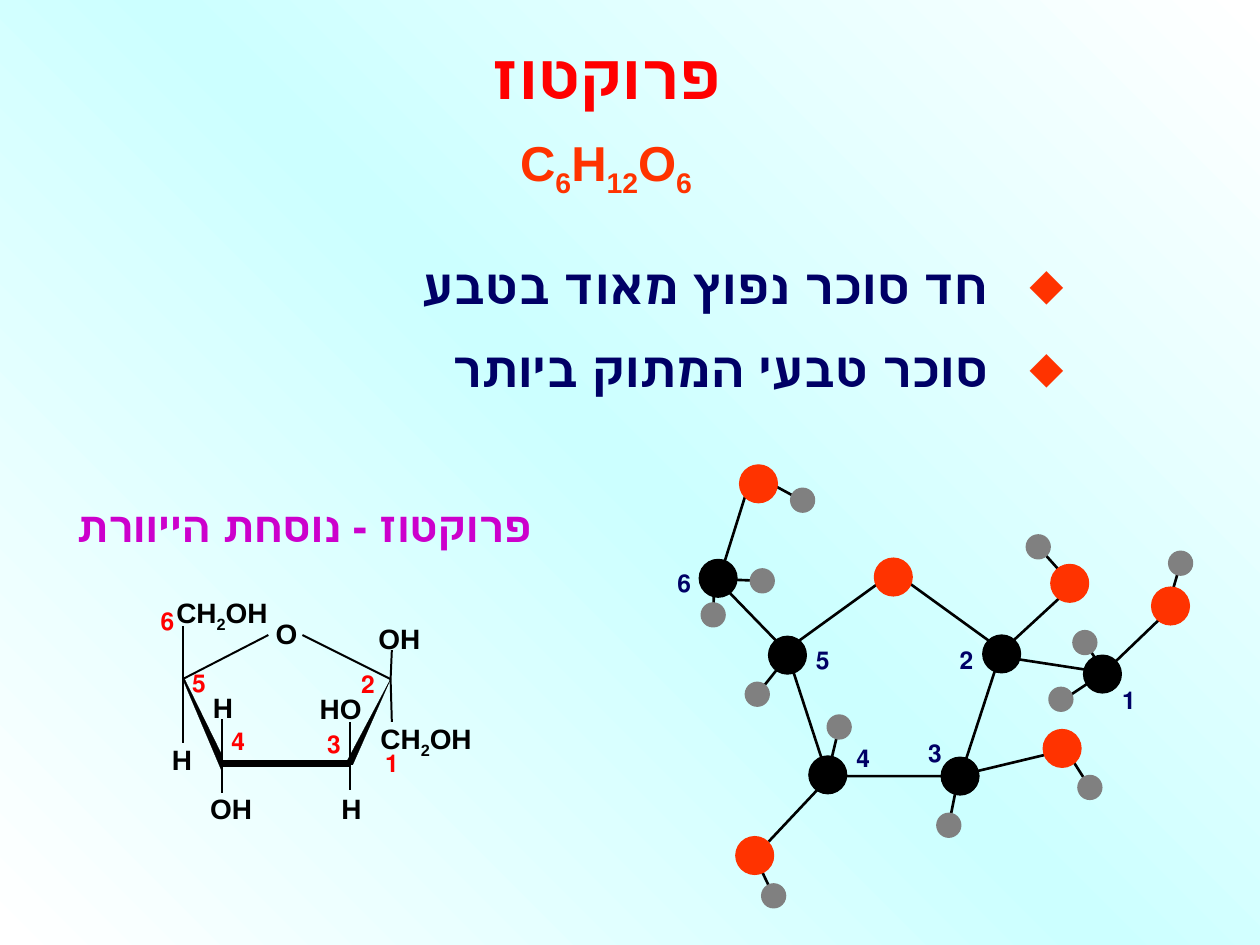
from copy import deepcopy
from itertools import groupby
from lxml import etree
from pptx import Presentation
from pptx import util as u
from pptx.dml.color import RGBColor as RGB
from pptx.enum import shapes, text
from pptx.oxml import ns

T = dict(
    font="Arial", red="FF0000", orange="FF3300", navy="000066", magenta="CC00CC",
    black="000000", grey="808080", white="FFFFFF", pale="CCFFFF",
    title=36, body=28, caption=24, atom=16, number=14,
)
LEFT, CENTER, RIGHT = text.PP_ALIGN.LEFT, text.PP_ALIGN.CENTER, text.PP_ALIGN.RIGHT

prs = Presentation()
prs.slide_width, prs.slide_height = u.Inches(10), u.Inches(7.5)
COL, ROW = prs.slide_width / 100, prs.slide_height / 75
s = prs.slides.add_slide(prs.slide_layouts[6])

fill = s.background.fill
fill.gradient()
fill.gradient_angle = 45
last = fill.gradient_stops[1]._gs
last.addprevious(deepcopy(last))
for stop, (position, color) in zip(
    fill.gradient_stops, [(0, T["white"]), (0.5, T["pale"]), (1, T["white"])]
):
    stop.position = position
    stop.color.rgb = RGB.from_string(color)


def add_text(parent, box, lines, size, color, align=CENTER, rtl=True,
             sub=False, inset=True, wrap=True):
    x, y, w, h = box
    sp = parent.shapes.add_textbox(*(int(v) for v in (x * COL, y * ROW, w * COL, h * ROW)))
    tf = sp.text_frame
    frame = dict(word_wrap=wrap, auto_size=text.MSO_AUTO_SIZE.SHAPE_TO_FIT_TEXT)
    if not inset:
        frame.update(margin_left=0, margin_top=0, margin_right=0, margin_bottom=0)
    for name, value in frame.items():
        setattr(tf, name, value)
    for i, line in enumerate(lines):
        p = tf.paragraphs[0] if i == 0 else tf.add_paragraph()
        p.alignment = align
        if rtl:
            p._p.get_or_add_pPr().set("rtl", "1")
        parts = groupby(line, str.isdigit) if sub else [(False, line)]
        for lowered, part in parts:
            r = p.add_run()
            r.text = "".join(part)
            for name, value in dict(name=T["font"], size=u.Pt(size), bold=True).items():
                setattr(r.font, name, value)
            r.font.color.rgb = RGB.from_string(color)
            if lowered:
                r._r.get_or_add_rPr().set("baseline", "-25000")
    return tf


def add_bonds(parent, bonds, width):
    for x1, y1, x2, y2 in bonds:
        c = parent.shapes.add_connector(
            shapes.MSO_CONNECTOR.STRAIGHT,
            int(x1 * COL), int(y1 * ROW), int(x2 * COL), int(y2 * ROW))
        c.line.color.rgb = RGB.from_string(T["black"])
        c.line.width = u.Pt(width)
        etree.SubElement(c._element.spPr, ns.qn("a:effectLst"))


add_text(s, (37.5, 2.4, 21.2, 7), ["פרוקטוז"], T["title"], T["red"])
facts = add_text(s, (16.1, 18.6, 69.3, 15.9),
                 ["חד סוכר נפוץ מאוד בטבע", "סוכר טבעי המתוק ביותר"],
                 T["body"], T["navy"], align=RIGHT)
for p in facts.paragraphs:
    p.line_spacing, p.space_before = 1.25, u.Pt(0.2 * T["body"])
    pPr = p._p.get_or_add_pPr()
    pPr.set("marL", str(int(6 * COL)))
    pPr.set("indent", str(int(-6 * COL)))
    clr = etree.SubElement(pPr, ns.qn("a:buClr"))
    etree.SubElement(clr, ns.qn("a:srgbClr"), val=T["orange"])
    etree.SubElement(pPr, ns.qn("a:buFont"), typeface=T["font"])
    etree.SubElement(pPr, ns.qn("a:buChar"), char="⬥")
add_text(s, (38.4, 10, 19.4, 7.7), ["C6H12O6"], T["body"], T["orange"], rtl=False, sub=True)

model = s.shapes.add_group_shape()
ring = model.shapes.add_shape(
    shapes.MSO_SHAPE.REGULAR_PENTAGON,
    int(62.4 * COL), int(45.4 * ROW), int(17.1 * COL), int(16.2 * ROW))
ring.shadow.inherit = False
ring.fill.background()
ring.line.color.rgb = RGB.from_string(T["black"])
ring.line.width = u.Pt(1.5)
add_bonds(model, [
    (93, 47.1, 93.7, 44.7), (61.7, 53.1, 60.1, 55.1), (66, 60.2, 66.6, 57.7),
    (57.5, 44.6, 59.7, 37.6), (61.4, 38.5, 63.6, 39.7), (56.7, 45.8, 63.1, 52.4),
    (56.7, 46.2, 56.6, 48.8), (57.9, 46, 60.5, 46.1), (60.3, 68.8, 61.4, 71.1),
    (61, 66.8, 65.8, 61.7), (85.1, 60.3, 86.5, 62.5), (76.3, 61.5, 83.4, 59.8),
    (75.8, 63, 75.3, 65.5), (92.6, 48.6, 87.6, 53.4), (87.8, 53.4, 78.7, 52),
    (87.5, 53.1, 86.1, 51), (86.7, 54, 84.6, 55.4), (84.7, 46.9, 79.6, 51.6),
    (84.1, 45.3, 82.4, 43.4),
], 1.5)
hydrogens = [(92.8, 43.8), (59.2, 54.2), (65.7, 56.8), (62.8, 38.8), (55.7, 47.9),
             (59.6, 45.2), (60.5, 70.2), (85.6, 61.6), (74.4, 64.6), (85.2, 50.1),
             (83.3, 54.6), (81.5, 42.5)]
carbons = [(74.7, 60.1), (64.2, 60), (61, 50.5), (55.5, 44.4), (78, 50.4), (86, 52)]
oxygens = [(58.7, 36.9), (58.4, 66.4), (82.8, 57.9), (69.4, 44.3), (91.4, 46.6), (83.4, 44.8)]
for atoms, size, color, width in [
    (hydrogens, 1.8, T["grey"], 1.5),
    (carbons, 3, T["black"], 0.75),
    (oxygens, 3, T["orange"], 0.75),
]:
    for x, y in atoms:
        sp = model.shapes.add_shape(
            shapes.MSO_SHAPE.OVAL,
            int(x * COL), int(y * ROW), int(size * COL), int(size * ROW))
        sp.shadow.inherit = False
        sp.fill.solid()
        sp.fill.fore_color.rgb = sp.line.color.rgb = RGB.from_string(color)
        sp.line.width = u.Pt(width)

haworth = s.shapes.add_group_shape()
for start, *points in [
    [(17.6, 60.3), (17.6, 60.8), (27.8, 60.8), (27.8, 60.3)],
    [(27.6, 60.3), (31, 53.9), (28, 60.7), (27.4, 60.7)],
    [(14.6, 53.8), (14.5, 53.9), (17.6, 61.2), (17.6, 59.9)],
]:
    fb = haworth.shapes.build_freeform(int(start[0] * COL), int(start[1] * ROW))
    fb.add_line_segments([(int(x * COL), int(y * ROW)) for x, y in points], close=True)
    sp = fb.convert_to_shape()
    sp.shadow.inherit = False
    sp.fill.solid()
    sp.fill.fore_color.rgb = sp.line.color.rgb = RGB.from_string(T["black"])
    sp.line.width = u.Pt(0.13)
add_bonds(haworth, [
    (31, 53.9, 24, 50.4), (21.3, 50.4, 14.5, 53.9), (31, 53.9, 31.1, 51.6),
    (31, 53.9, 31.1, 57.3), (27.8, 60.5, 27.8, 62.7), (17.6, 60.5, 17.6, 62.9),
    (17.6, 60.5, 17.6, 57.1), (14.5, 53.9, 14.5, 49.7), (27.8, 60.5, 27.8, 57.3),
    (14.5, 53.9, 14.5, 59),
], 1.13)
for label, x, y, w, align, wrap in [
    ("OH", 28.7, 49.3, 6, CENTER, True), ("H", 13.3, 58.9, 2.3, CENTER, True),
    ("O", 21.9, 48.9, 1.7, RIGHT, False), ("H", 27.1, 62.8, 1.6, RIGHT, False),
    ("O", 16.7, 62.8, 1.7, RIGHT, False), ("H", 18.4, 62.8, 1.6, RIGHT, False),
    ("H", 16.9, 54.8, 1.6, RIGHT, False), ("HO", 24.7, 54.9, 4, RIGHT, True),
]:
    add_text(haworth, (x, y, w, 2.7), [label], T["atom"], T["black"],
             align=align, inset=False, wrap=wrap)
for x, y in [(14, 47.3), (30.2, 57.3)]:
    add_text(haworth, (x, y, 9, 4), ["CH2OH"], T["atom"], T["black"],
             align=LEFT, rtl=False, sub=True, inset=False)
add_text(haworth, (3.1, 39.2, 41.1, 5), ["פרוקטוז - נוסחת הייוורת "], T["caption"], T["magenta"])

for parent, color, places in [
    (model, T["navy"], [(86.4, 53.9), (73.5, 50.7), (71, 58.1),
                        (65.3, 58.5), (62.1, 50.7), (51.1, 44.6)]),
    (haworth, T["red"], [(27.9, 58.9), (26, 52.6), (23.3, 57.4),
                         (15.7, 57.1), (12.6, 52.5), (10.1, 47.6)]),
]:
    for number, (x, y) in enumerate(places, 1):
        add_text(parent, (x, y, 6.4, 3.3), [str(number)], T["number"], color)

prs.save("out.pptx")
